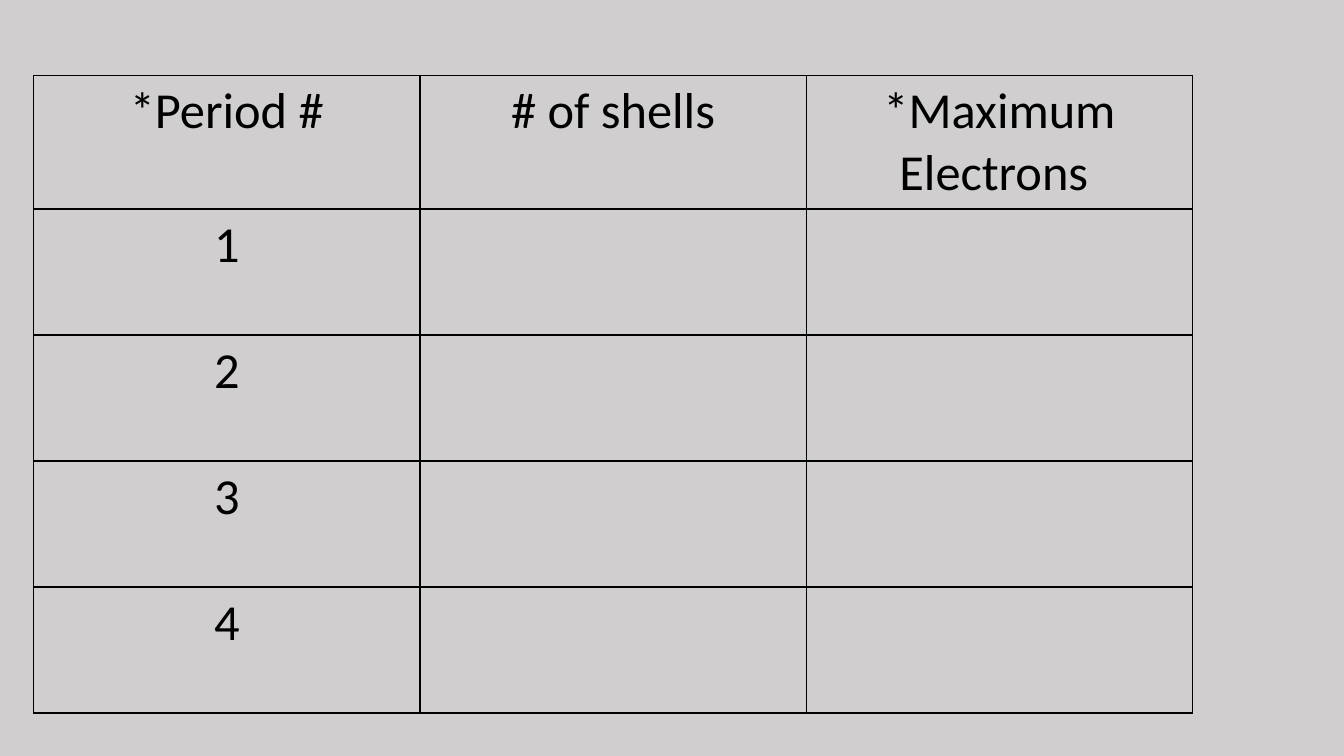
from lxml import etree
from pptx import Presentation
from pptx.dml.color import RGBColor
from pptx.enum.text import PP_ALIGN
from pptx.oxml.ns import qn
from pptx.util import Pt

CENTER = PP_ALIGN.CENTER
BACKGROUND = "D0CECE"
BLACK = "000000"
FONT = "Calibri"
HEADERS = ["*Period #", "# of shells", "*Maximum Electrons "]
PERIODS = ["1", "2", "3", "4"]
COLUMN_WIDTH = 276
ROW_HEIGHT = 90


def color(hex_value):
    return RGBColor.from_string(hex_value)


def set_borders(cell, hex_value, width):
    tcPr = cell._tc.get_or_add_tcPr()
    for side in ("lnL", "lnR", "lnT", "lnB"):
        ln = etree.SubElement(tcPr, qn(f"a:{side}"), w=str(Pt(width)))
        fill = etree.SubElement(ln, qn("a:solidFill"))
        etree.SubElement(fill, qn("a:srgbClr"), val=hex_value)


def fill_cell(cell, text):
    set_borders(cell, BLACK, 1)
    cell.fill.background()
    p = cell.text_frame.paragraphs[0]
    p.text = text
    p.alignment = CENTER
    p.font.size = Pt(36)
    for r in p.runs:
        r.font.name = FONT
        r.font.size = Pt(36)
        r.font.bold = False
        r.font.color.rgb = color(BLACK)


def add_grid(slide, rows, left, top):
    n_rows, n_cols = len(rows), len(rows[0])
    table = slide.shapes.add_table(
        n_rows, n_cols, Pt(left), Pt(top),
        Pt(n_cols * COLUMN_WIDTH), Pt(n_rows * ROW_HEIGHT)).table
    table.first_row = False
    table.horz_banding = False
    for row, texts in zip(table.rows, rows):
        for cell, text in zip(row.cells, texts):
            fill_cell(cell, text)


def main():
    prs = Presentation()
    prs.slide_width, prs.slide_height = Pt(960), Pt(540)
    s = prs.slides.add_slide(prs.slide_layouts[6])
    s.background.fill.solid()
    s.background.fill.fore_color.rgb = color(BACKGROUND)
    rows = [HEADERS] + [[period, "", ""] for period in PERIODS]
    add_grid(s, rows, 24, 54)
    prs.save("out.pptx")


if __name__ == "__main__":
    main()
